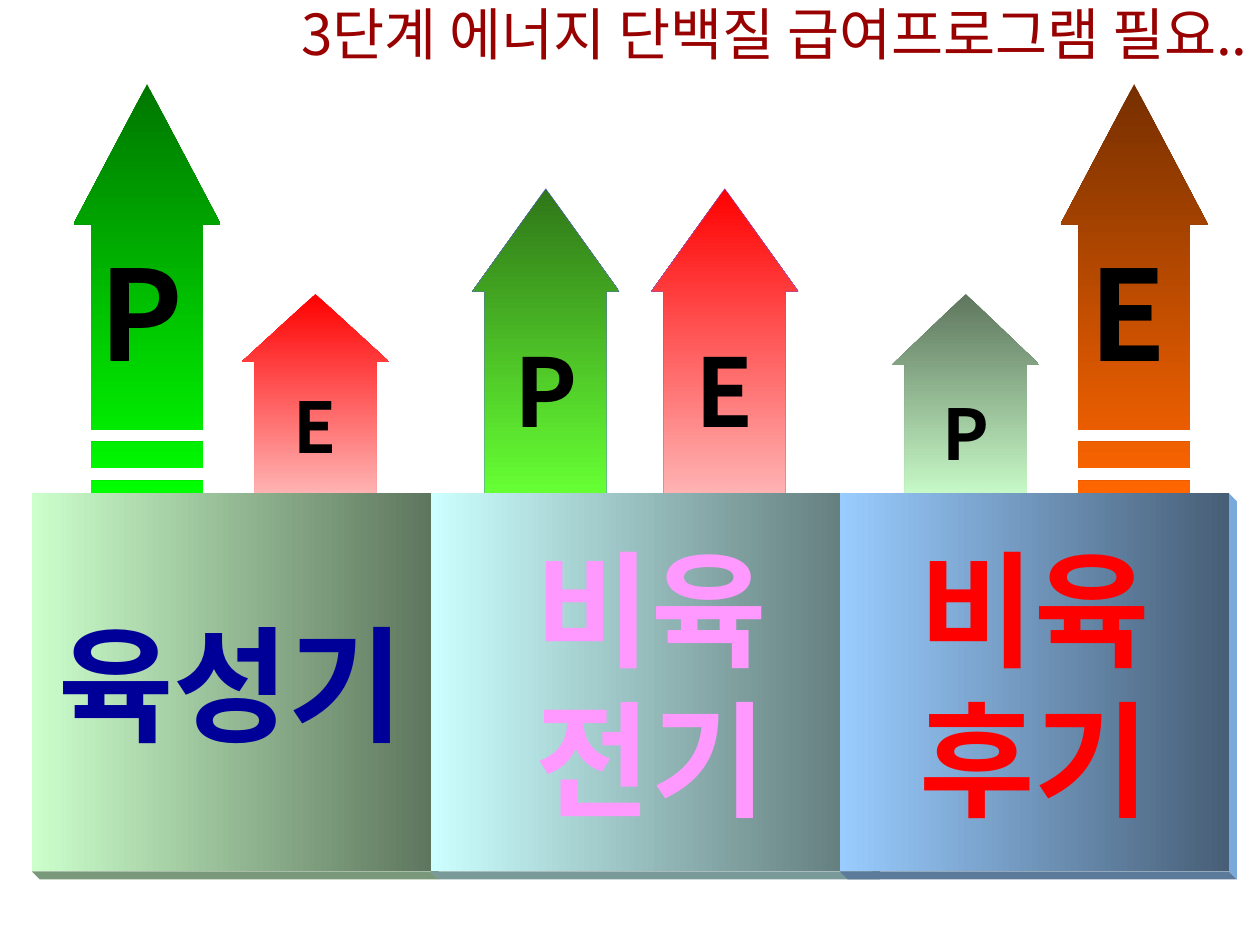
from lxml import etree
from pptx import Presentation
from pptx import util as u
from pptx.dml.color import RGBColor
from pptx.enum import shapes, text
from pptx.oxml.ns import qn

NOTO, LATO = "Noto Sans CJK KR", "Lato"
HEX = {
    "title": "990000", "black": "000000", "edge": "6161FF",
    "navy": "000099", "pink": "FF99FF", "red": "FF0000", "rose": "FFB2B2",
    "mint": "CCFFCC", "sage": "5E765E", "moss": "7A997A",
    "aqua": "CCFFFF", "teal": "5E7676", "slate": "7A9999",
    "sky": "99CCFF", "steel": "475E76", "dusk": "5C7A99", "haze": "7AAADB",
    "leaf": "2F7618", "lime": "66FF33", "pine": "007600", "green": "00FF00",
    "brown": "762F00", "orange": "FF6600",
}
WIDTH = 1.66    # arrow width
BASE = 5.57     # where the arrows stand on the boxes
DEPTH = 0.09    # thickness of the boxes


def color(name):
    return RGBColor.from_string(HEX[name])


def write(shape, lines, size, ink, font=NOTO, align=text.PP_ALIGN.CENTER,
          anchor=text.MSO_ANCHOR.MIDDLE, space=1.0, wrap=True,
          pad=(0.14, 0.07, 0.14, 0.07), bold=True):
    frame = shape.text_frame
    frame.auto_size = text.MSO_AUTO_SIZE.NONE
    frame.word_wrap = wrap
    frame.vertical_anchor = anchor
    frame.margin_left, frame.margin_top, frame.margin_right, frame.margin_bottom = map(u.Inches, pad)
    for i, line in enumerate(lines):
        para = frame.paragraphs[0] if i == 0 else frame.add_paragraph()
        para.alignment = align
        para.line_spacing = space
        run = para.add_run()
        run.text = line
        run.font.size = u.Pt(size)
        run.font.bold = bold
        run.font.name = font
        run.font.color.rgb = color(ink)
        east = etree.SubElement(run.font._element, qn("a:ea"))
        east.set("typeface", font)


def paint(shape, first, last=None, angle=0, edge=None):
    """Fill with one colour, or with a gradient when last is given."""
    shape.shadow.inherit = False
    if last:
        shape.fill.gradient()
        shape.fill.gradient_angle = angle
        for stop, name in zip(shape.fill.gradient_stops, (first, last)):
            stop.color.rgb = color(name)
    else:
        shape.fill.solid()
        shape.fill.fore_color.rgb = color(first)
    if edge:
        shape.line.color.rgb = color(edge)
        shape.line.width = u.Pt(0.25)
    else:
        shape.line.fill.background()


def outline(slide, *rings):
    """Draw closed rings of points, in inches, as one shape."""
    rings = [[(u.Inches(x), u.Inches(y)) for x, y in ring] for ring in rings]
    pen = slide.shapes.build_freeform(*rings[0][0])
    for i, ring in enumerate(rings):
        if i:
            pen.move_to(*ring[0])
        pen.add_line_segments(ring[1:], close=True)
    return pen.convert_to_shape()


def title(slide, words, x, y, w, h):
    head = slide.shapes.title
    head.left, head.top, head.width, head.height = map(u.Inches, (x, y, w, h))
    write(head, [words], 46, "title", align=text.PP_ALIGN.RIGHT,
          anchor=text.MSO_ANCHOR.BOTTOM, space=0.9, bold=False)


def arrow(slide, x, y, h, label, size, first, last, head, edge=None):
    shape = slide.shapes.add_shape(shapes.MSO_SHAPE.UP_ARROW,
                                   *map(u.Inches, (x, y, WIDTH, h)))
    shape.adjustments[0] = 0.83
    shape.adjustments[1] = head
    paint(shape, first, last, 270, edge)
    write(shape, [label], size, "black", space=1.1)


def striped(slide, x, y, label, first, last):
    """Tall arrow whose foot is cut into two stripes."""
    left, right, neck = x + 0.2, x + WIDTH - 0.2, y + 1.58
    point = [(x, neck), (left, neck), (left, BASE - 0.72), (right, BASE - 0.72),
             (right, neck), (x + WIDTH, neck), (x + WIDTH / 2, y)]
    bars = [[(left, low), (right, low), (right, high), (left, high)]
            for low, high in ((BASE - 0.29, BASE - 0.58), (BASE, BASE - 0.14))]
    shape = outline(slide, point, *bars)
    paint(shape, first, last, 270)
    write(shape, [label], 102, "black", wrap=False, pad=(0.14, 0.57, 0.28, 0.07))


def box(slide, x, y, w, h, lines, ink, first, last, under, side):
    """Solid block with a gradient face and two visible edges."""
    right, low = x + w, y + h
    paint(outline(slide, [(x, low), (right, low), (right + DEPTH, low + DEPTH),
                          (x + DEPTH, low + DEPTH)]), under)
    paint(outline(slide, [(right, y), (right + DEPTH, y + DEPTH),
                          (right + DEPTH, low + DEPTH), (right, low)]), side)
    face = slide.shapes.add_shape(shapes.MSO_SHAPE.RECTANGLE,
                                  *map(u.Inches, (x, y, w, h)))
    paint(face, first, last)
    write(face, lines, 102, ink, font=LATO, wrap=False)


def main():
    deck = Presentation()
    deck.slide_width, deck.slide_height = u.Inches(14.22), u.Inches(10.67)
    slide = deck.slides.add_slide(deck.slide_layouts[5])

    arrow(slide, 10.07, 3.32, 2.37, "P", 57, "sage", "mint", 0.48)
    arrow(slide, 2.73, 3.32, 2.25, "E", 57, "red", "rose", 0.46)
    arrow(slide, 7.35, 2.13, 3.44, "E", 77, "red", "rose", 0.7, "edge")
    arrow(slide, 5.33, 2.13, 3.44, "P", 77, "leaf", "lime", 0.7, "edge")

    for x, w, *look in (
        (0.36, 4.5, ["육성기"], "navy", "mint", "sage", "moss", "moss"),
        (4.86, 4.98, ["비육", "전기"], "pink", "aqua", "teal", "slate", "slate"),
        (9.48, 4.39, ["비육", "후기"], "red", "sky", "steel", "dusk", "haze"),
    ):
        box(slide, x, BASE, w, 4.27, *look)

    striped(slide, 0.83, 0.95, "P", "pine", "green")
    striped(slide, 11.97, 0.95, "E", "brown", "orange")
    title(slide, "3단계 에너지 단백질 급여프로그램 필요..", 0.83, -0.01, 13.39, 0.84)
    deck.save("out.pptx")


if __name__ == "__main__":
    main()
